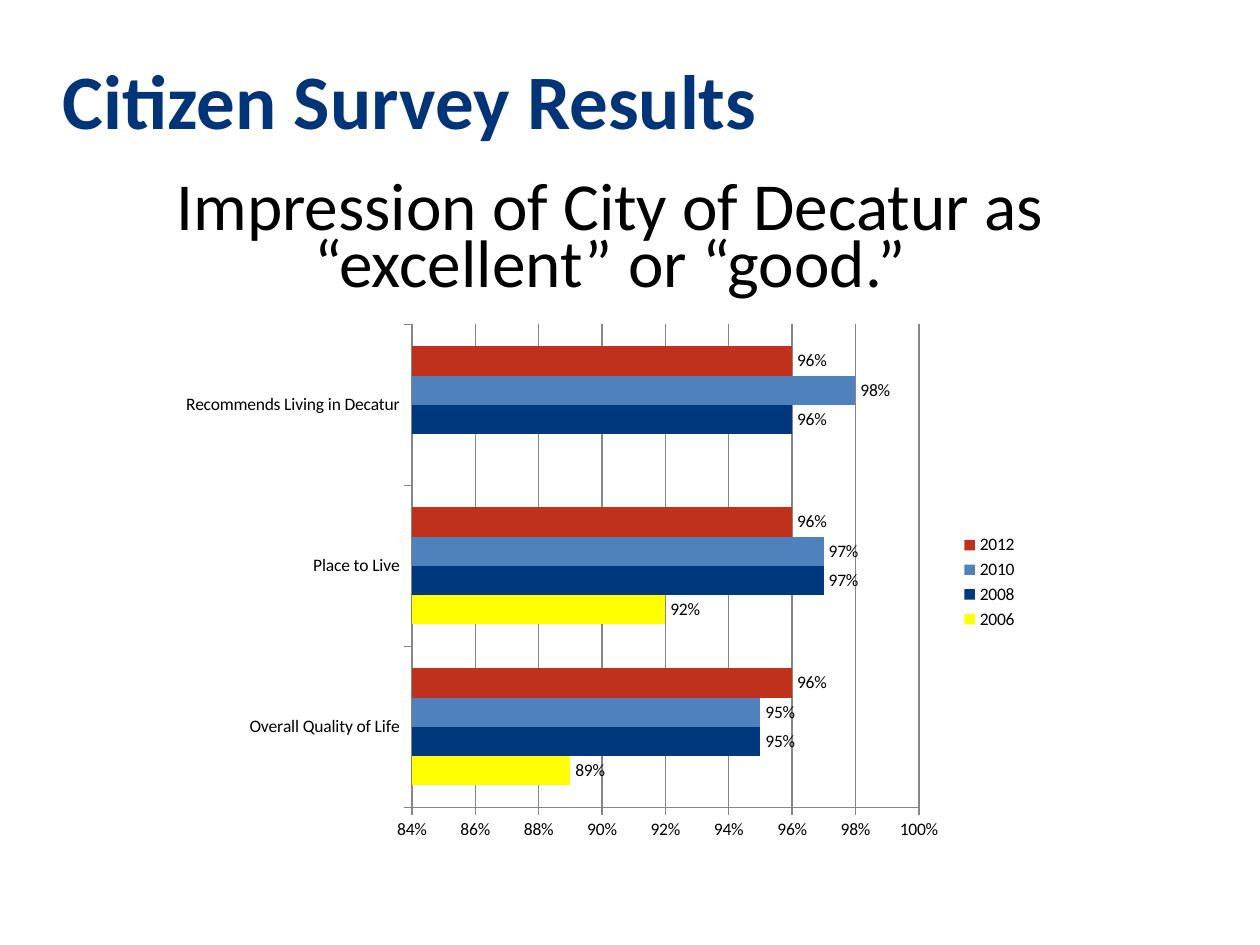
from lxml.etree import SubElement
from pptx import Presentation
from pptx.chart.data import CategoryChartData
from pptx.dml.color import RGBColor
from pptx.enum.chart import (XL_CHART_TYPE, XL_LABEL_POSITION,
                             XL_LEGEND_POSITION, XL_TICK_MARK)
from pptx.enum.text import MSO_ANCHOR, PP_ALIGN
from pptx.oxml.ns import qn
from pptx.util import Inches, Pt

NAVY = RGBColor(0x00, 0x34, 0x79)
BLACK = RGBColor(0x00, 0x00, 0x00)
GREY = RGBColor(0x86, 0x86, 0x86)
YELLOW = RGBColor(0xFF, 0xFF, 0x00)
DARK_BLUE = RGBColor(0x00, 0x38, 0x7D)
MID_BLUE = RGBColor(0x4F, 0x81, 0xBD)
RED = RGBColor(0xBF, 0x31, 0x1A)

QUESTIONS = ["Overall Quality of Life", "Place to Live", "Recommends Living in Decatur"]
YEARS = {
    "2006": (YELLOW, [0.89, 0.92, None]),
    "2008": (DARK_BLUE, [0.95, 0.97, 0.96]),
    "2010": (MID_BLUE, [0.95, 0.97, 0.98]),
    "2012": (RED, [0.96, 0.96, 0.96]),
}


def assign(target, values):
    for name, value in values.items():
        setattr(target, name, value)


class SurveySlide:
    font_name = "Calibri"
    percent = {"number_format": "0%", "number_format_is_linked": False}

    def __init__(self, deck):
        self.width, self.height = deck.slide_width, deck.slide_height
        self.slide = deck.slides.add_slide(deck.slide_layouts[6])

    def place(self, left, top, width, height):
        """Turn shares of the slide's size into lengths."""
        return (round(left * self.width), round(top * self.height),
                round(width * self.width), round(height * self.height))

    def text(self, words, area, size, color, frame_format, paragraph_format, bold=False):
        frame = self.slide.shapes.add_textbox(*self.place(*area)).text_frame
        assign(frame, {"word_wrap": True, **frame_format})
        paragraph = frame.paragraphs[0]
        assign(paragraph, paragraph_format)
        run = paragraph.add_run()
        run.text = words
        assign(run.font, {"name": self.font_name, "size": Pt(size), "bold": bold})
        run.font.color.rgb = color

    def bar_chart(self, categories, groups, area, plot_area):
        data = CategoryChartData(number_format="0%")
        data.categories = categories
        for name, (_, values) in groups.items():
            data.add_series(name, values)
        chart = self.slide.shapes.add_chart(
            XL_CHART_TYPE.BAR_CLUSTERED, *self.place(*area), data).chart
        assign(chart, {"has_title": False, "has_legend": True})
        assign(chart.font, {"name": self.font_name, "size": Pt(10)})
        chart.font.color.rgb = BLACK
        assign(chart.legend, {"position": XL_LEGEND_POSITION.RIGHT,
                              "include_in_layout": False})
        self.style_bars(chart.plots[0], groups)
        self.style_axes(chart)
        self.fix_plot_area(chart, plot_area)

    def style_bars(self, plot, groups):
        assign(plot, {"gap_width": 150, "overlap": 0, "vary_by_categories": False})
        for series, (color, _) in zip(plot.series, groups.values()):
            series.invert_if_negative = False
            series.format.fill.solid()
            series.format.fill.fore_color.rgb = color
            assign(series.data_labels, {"show_value": True, **self.percent,
                                        "position": XL_LABEL_POSITION.OUTSIDE_END})

    def style_axes(self, chart):
        scale = chart.value_axis
        assign(scale, {"minimum_scale": 0.84, "maximum_scale": 1,
                       "major_unit": 0.02, "has_major_gridlines": True})
        assign(scale.tick_labels, self.percent)
        for axis in (scale, chart.category_axis):
            axis.major_tick_mark = XL_TICK_MARK.OUTSIDE
        for part in (scale, chart.category_axis, scale.major_gridlines):
            part.format.line.color.rgb = GREY
            part.format.line.width = Pt(0.75)

    def fix_plot_area(self, chart, shares):
        """Set the inner plot area as shares of the chart's size."""
        plot_area = chart.plots[0]._element.getparent()
        for old in plot_area.findall(qn("c:layout")):
            plot_area.remove(old)
        layout = SubElement(plot_area, qn("c:layout"))
        plot_area.insert(0, layout)
        manual = SubElement(layout, qn("c:manualLayout"))
        settings = {"layoutTarget": "inner", "xMode": "edge", "yMode": "edge",
                    **dict(zip("xywh", shares))}
        for tag, value in settings.items():
            SubElement(manual, qn(f"c:{tag}")).set("val", str(value))


def main():
    deck = Presentation()
    assign(deck, {"slide_width": Inches(10), "slide_height": Inches(7.5)})
    survey = SurveySlide(deck)
    survey.text("Citizen Survey Results", (0.04, 0.036, 0.9, 0.136), 44, NAVY,
                {"vertical_anchor": MSO_ANCHOR.MIDDLE},
                {"alignment": PP_ALIGN.LEFT}, bold=True)
    survey.text("Impression of City of Decatur as “excellent” or “good.”",
                (0.05, 0.19, 0.868, 0.18), 38.4, BLACK,
                {"vertical_anchor": MSO_ANCHOR.TOP},
                {"alignment": PP_ALIGN.CENTER, "line_spacing": 0.7})
    survey.bar_chart(QUESTIONS, YEARS, (0.136, 0.332, 0.682, 0.568),
                     (0.28, 0.02, 0.59, 0.9))
    deck.save("out.pptx")


if __name__ == "__main__":
    main()
